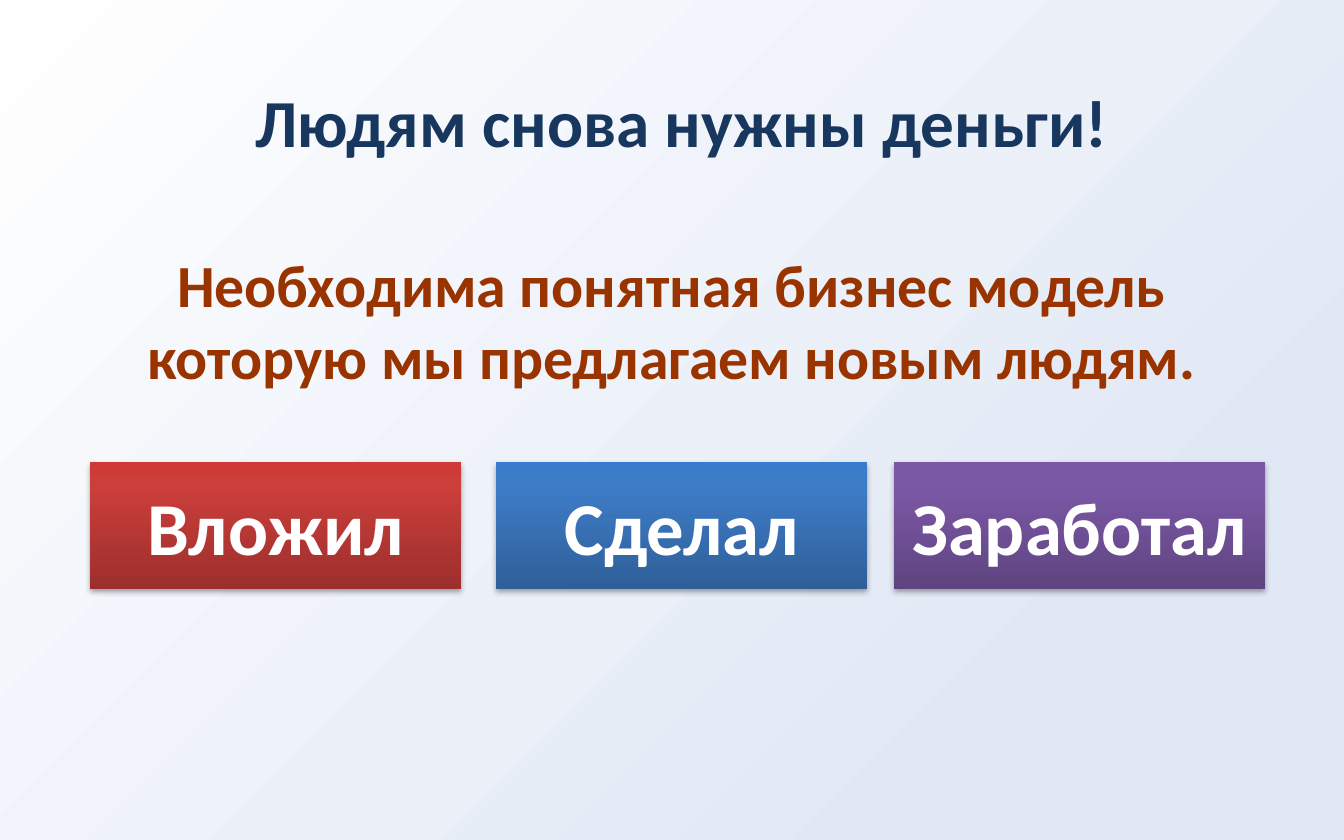
import pptx
import pptx.util
import pptx.dml.color
import pptx.enum.shapes
import pptx.enum.text
import pptx.oxml
import pptx.oxml.ns
from dataclasses import dataclass

SCALE = 914400 / 134.4


@dataclass(frozen=True)
class Theme:
    font: str = "Calibri"
    navy: str = "17375E"
    rust: str = "993300"
    white: str = "FFFFFF"
    back: tuple = ((0, "FFFFFF"), (80, "E1E8F5"), (100, "E1E8F5"))
    red: tuple = ((0, "9C2F2D"), (80, "CB3E3A"), (100, "CE3B37"))
    blue: tuple = ((0, "2F5F99"), (80, "3D7CC7"), (100, "3A7CCB"))
    plum: tuple = ((0, "5F4480"), (80, "7B58A6"), (100, "7C57A8"))
    head: int = 36
    body: int = 32
    step: int = 40


def px(*sizes):
    return [round(size * SCALE) for size in sizes]


def assign(item, values):
    for name, value in values.items():
        setattr(item, name, value)


class Deck:
    def __init__(self, theme, width, height):
        self.theme = theme
        self.show = pptx.Presentation()
        wide, high = px(width, height)
        assign(self.show, {"slide_width": wide, "slide_height": high})
        self.slide = self.show.slides.add_slide(self.show.slide_layouts[5])

    def blend(self, fill, root, stops, angle):
        fill.gradient()
        fill.gradient_angle = angle
        group = next(root.iter(pptx.oxml.ns.qn("a:gsLst")))
        group.clear()
        space = pptx.oxml.ns.nsdecls("a")
        for place, color in stops:
            group.append(pptx.oxml.parse_xml(
                f'<a:gs {space} pos="{place * 1000}">'
                f'<a:srgbClr val="{color}"/></a:gs>'))

    def ground(self, stops):
        self.blend(self.slide.background.fill, self.slide.element, stops, 315)

    def label(self, shape, text, size, color, anchor):
        frame = shape.text_frame
        frame.text = text
        assign(frame, {"word_wrap": True, "vertical_anchor": anchor,
                       "auto_size": pptx.enum.text.MSO_AUTO_SIZE.NONE})
        line = frame.paragraphs[0]
        line.alignment = pptx.enum.text.PP_ALIGN.CENTER
        font = line.runs[0].font
        assign(font, {"name": self.theme.font, "bold": True,
                      "size": pptx.util.Pt(size)})
        font.color.rgb = pptx.dml.color.RGBColor.from_string(color)

    def title(self, text, *area):
        shape = self.slide.shapes.title
        assign(shape, dict(zip(("left", "top", "width", "height"), px(*area))))
        self.label(shape, text, self.theme.head, self.theme.navy,
                   pptx.enum.text.MSO_ANCHOR.MIDDLE)

    def note(self, text, *area):
        shape = self.slide.shapes.add_textbox(*px(*area))
        self.label(shape, text, self.theme.body, self.theme.rust,
                   pptx.enum.text.MSO_ANCHOR.TOP)

    def block(self, text, stops, *area):
        shape = self.slide.shapes.add_shape(
            pptx.enum.shapes.MSO_SHAPE.RECTANGLE, *px(*area))
        self.blend(shape.fill, shape.element, stops, 90)
        shape.line.fill.background()
        self.shade(shape)
        self.label(shape, text, self.theme.step, self.theme.white,
                   pptx.enum.text.MSO_ANCHOR.MIDDLE)

    def shade(self, shape):
        blur, gap = pptx.util.Pt(3.1), pptx.util.Pt(1.8)
        shape.element.spPr.append(pptx.oxml.parse_xml(
            f'<a:effectLst {pptx.oxml.ns.nsdecls("a")}>'
            f'<a:outerShdw blurRad="{blur}" dist="{gap}" dir="5400000" '
            'rotWithShape="0"><a:srgbClr val="000000">'
            '<a:alpha val="35000"/></a:srgbClr></a:outerShdw></a:effectLst>'))


def main():
    theme = Theme()
    deck = Deck(theme, 1344, 840)
    deck.ground(theme.back)
    deck.note("Необходима понятная бизнес модель которую мы предлагаем "
              "новым людям.", 67, 241, 1210, 511)
    deck.title("Людям снова нужны деньги!", 77, 51, 1210, 140)
    steps = (("Вложил", theme.red, 90), ("Сделал", theme.blue, 496),
             ("Заработал", theme.plum, 894))
    for text, stops, left in steps:
        deck.block(text, stops, left, 462, 371, 127)
    deck.show.save("out.pptx")


if __name__ == "__main__":
    main()
